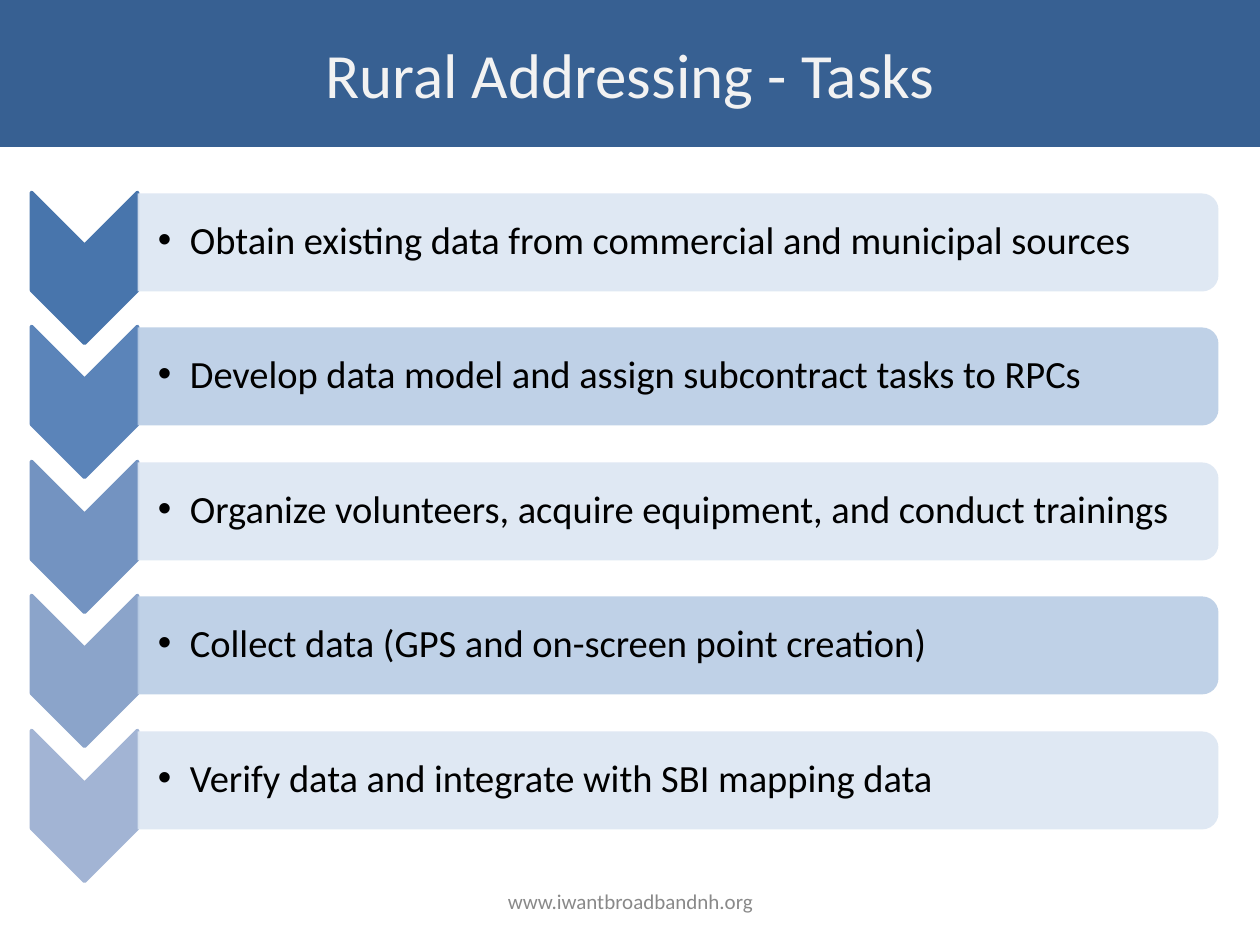
from lxml.etree import SubElement
from pptx import Presentation
from pptx.dml.color import RGBColor
from pptx.enum.shapes import MSO_SHAPE
from pptx.enum.text import MSO_ANCHOR, PP_ALIGN
from pptx.oxml.ns import qn
from pptx.util import Emu, Pt

PX = 914400 // 126
FONT = "Calibri"
COLORS = {
    "bar": "376092",
    "title": "F2F2F2",
    "text": "000000",
    "footer": "898989",
}
PANELS = ["DCE6F2", "B9CDE5"]
TASKS = [
    ("4875AC", "Obtain existing data from commercial and municipal sources"),
    ("5B84B9", "Develop data model and assign subcontract tasks to RPCs"),
    ("7393C1", "Organize volunteers, acquire equipment, and conduct trainings"),
    ("8BA4CA", "Collect data (GPS and on-screen point creation)"),
    ("A2B4D4", "Verify data and integrate with SBI mapping data"),
]
FIRST, LAST = 242, 780  # middles of the first and last rows


def px(*nums):
    return [Emu(n * PX) for n in nums]


def paint(fill, color):
    fill.solid()
    fill.fore_color.rgb = RGBColor.from_string(color)


def write(frame, text, size, color, align):
    frame.word_wrap = True
    frame.vertical_anchor = MSO_ANCHOR.MIDDLE
    para = frame.paragraphs[0]
    para.alignment = align
    run = para.add_run()
    run.text = text
    run.font.name = FONT
    run.font.size = Pt(size)
    run.font.color.rgb = RGBColor.from_string(color)
    return para


def add_title(slide, text):
    title = slide.shapes.title
    title.left, title.top, title.width, title.height = px(0, 0, 1260, 147)
    paint(title.fill, COLORS["bar"])
    write(title.text_frame, text, 36, COLORS["title"], PP_ALIGN.CENTER)


def add_turned(slide, kind, mid_x, mid_y, wide, high, color):
    """Add a shape turned a quarter, given its size as seen after turning."""
    box = px(mid_x - high // 2, mid_y - wide // 2, high, wide)
    shape = slide.shapes.add_shape(kind, *box)
    shape.rotation = 90
    shape.shadow.inherit = False
    paint(shape.fill, color)
    return shape


def add_arrow(slide, mid, color):
    arrow = add_turned(slide, MSO_SHAPE.CHEVRON, 84, mid + 26, 106, 151, color)
    paint(arrow.line.fill, color)
    arrow.line.width = Pt(2)


def add_panel(slide, mid, color):
    kind = MSO_SHAPE.ROUND_2_SAME_RECTANGLE
    panel = add_turned(slide, kind, 678, mid, 1081, 98, color)
    panel.line.fill.background()
    tint = panel.fill._xPr.find(".//" + qn("a:srgbClr"))
    SubElement(tint, qn("a:alpha"), val="90000")


def add_bullet(slide, mid, text):
    box = slide.shapes.add_textbox(*px(137, mid - 44, 1076, 88))
    frame = box.text_frame
    frame.margin_left, frame.margin_right = px(21, 3)
    frame.margin_top, frame.margin_bottom = px(3, 3)
    para = write(frame, text, 22, COLORS["text"], PP_ALIGN.LEFT)
    para.line_spacing = 0.9
    props = para._p.get_or_add_pPr()
    indent = 32 * PX
    props.set("marL", str(indent))
    props.set("indent", str(-indent))
    SubElement(props, qn("a:buFont"), typeface="Arial")
    SubElement(props, qn("a:buChar"), char="•")


def add_footer(slide, text):
    box = slide.shapes.add_textbox(*px(431, 876, 399, 50))
    write(box.text_frame, text, 12, COLORS["footer"], PP_ALIGN.CENTER)


def main():
    deck = Presentation()
    deck.slide_width, deck.slide_height = px(1260, 945)
    slide = deck.slides.add_slide(deck.slide_layouts[5])
    add_title(slide, "Rural Addressing - Tasks")

    # Task rows: arrow, panel and bullet text
    for row, (color, text) in enumerate(TASKS):
        mid = FIRST + (LAST - FIRST) * row // (len(TASKS) - 1)
        add_arrow(slide, mid, color)
        add_panel(slide, mid, PANELS[row % 2])
        add_bullet(slide, mid, text)

    add_footer(slide, "www.iwantbroadbandnh.org")
    deck.save("out.pptx")


if __name__ == "__main__":
    main()
